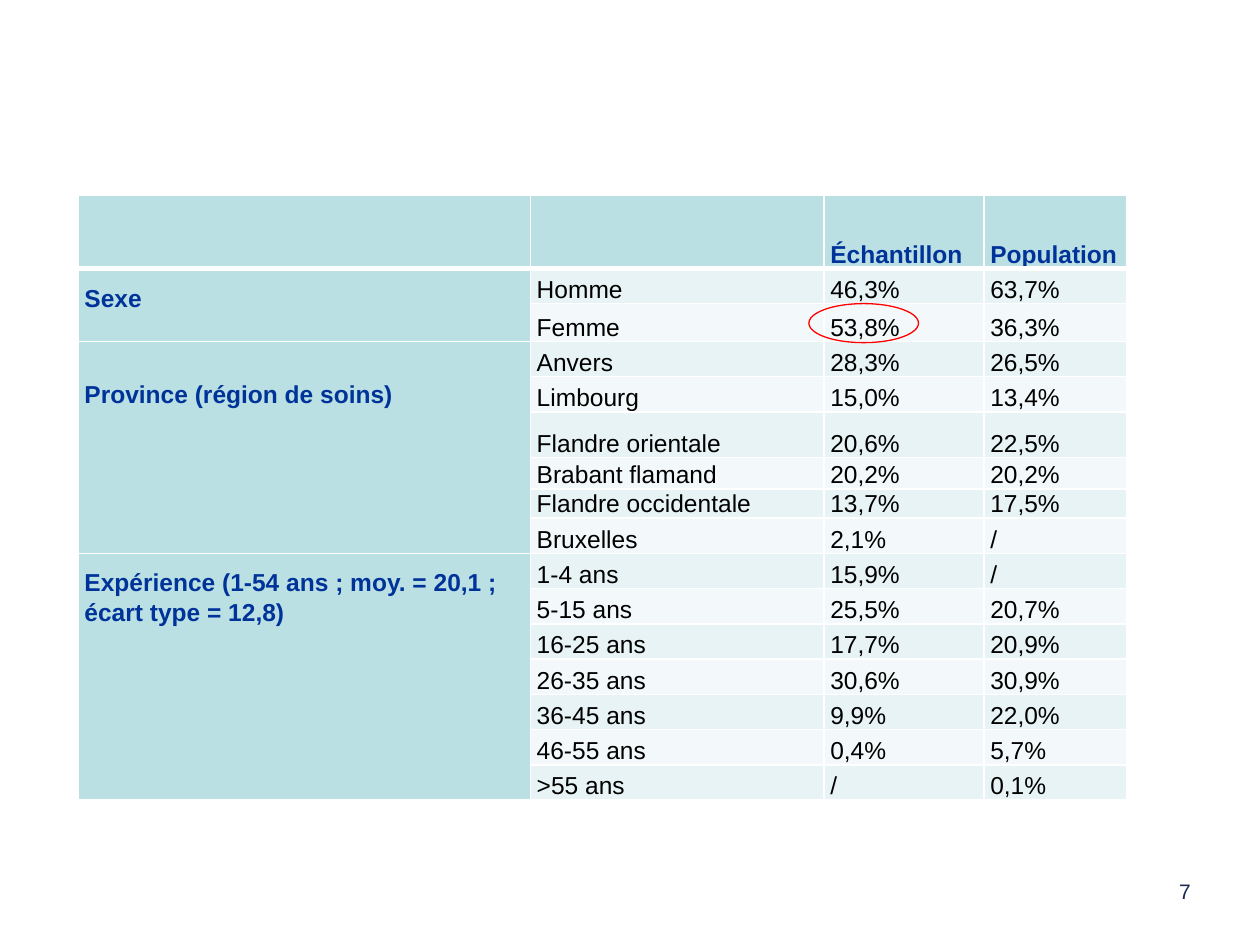
from dataclasses import dataclass

from lxml import etree
from pptx import Presentation
from pptx.dml.color import RGBColor
from pptx.enum.shapes import MSO_SHAPE
from pptx.enum.text import MSO_ANCHOR, PP_ALIGN
from pptx.oxml.ns import qn
from pptx.util import Inches, Pt

BOTTOM = MSO_ANCHOR.BOTTOM
RIGHT = PP_ALIGN.RIGHT
ELLIPSE = MSO_SHAPE.OVAL


@dataclass(frozen=True)
class Theme:
    font: str = "Arial"
    table_size: int = 14
    number_size: int = 12
    heading: str = "003399"
    body: str = "000000"
    number: str = "182B52"
    accent: str = "BBE0E3"
    bands: tuple = ("E7F3F4", "F3F9FA")
    border: str = "FFFFFF"
    mark: str = "FF0000"
    line_spacing: float = 1.06
    line_height: float = 0.23


COLUMN_WIDTHS = [3.59, 2.33, 1.27, 1.13]
HEADER_HEIGHT = 0.58
ROW_HEIGHT = 0.28
SPECIAL_HEIGHTS = {2: 0.3, 5: 0.36, 6: 0.25, 7: 0.23}
HEADINGS = ["", "", "Échantillon", "Population"]
GROUPS = [
    ("Sexe", 1, [
        ("Homme", "46,3%", "63,7%"),
        ("Femme", "53,8%", "36,3%"),
    ]),
    ("Province (région de soins)", 5, [
        ("Anvers", "28,3%", "26,5%"),
        ("Limbourg", "15,0%", "13,4%"),
        ("Flandre orientale", "20,6%", "22,5%"),
        ("Brabant flamand", "20,2%", "20,2%"),
        ("Flandre occidentale", "13,7%", "17,5%"),
        ("Bruxelles", "2,1%", "/"),
    ]),
    ("Expérience (1-54 ans ; moy. = 20,1 ; écart type = 12,8)", 6, [
        ("1-4 ans", "15,9%", "/"),
        ("5-15 ans", "25,5%", "20,7%"),
        ("16-25 ans", "17,7%", "20,9%"),
        ("26-35 ans", "30,6%", "30,9%"),
        ("36-45 ans", "9,9%", "22,0%"),
        ("46-55 ans", "0,4%", "5,7%"),
        (">55 ans", "/", "0,1%"),
    ]),
]


def apply_format(target, values):
    for name, value in values.items():
        setattr(target, name, value)


class SlideBuilder:
    def __init__(self, page, theme):
        self.page = page
        self.theme = theme

    def add_text(self, para, text, size, color, bold=False):
        span = para.add_run()
        span.text = text
        apply_format(span.font, {
            "name": self.theme.font, "size": Pt(size), "bold": bold})
        span.font.color.rgb = RGBColor.from_string(color)

    def borders(self, cell, bottom_width):
        properties = cell._tc.get_or_add_tcPr()
        widths = {"a:lnL": 1, "a:lnR": 1, "a:lnT": 1, "a:lnB": bottom_width}
        for tag, width in widths.items():
            line = etree.SubElement(properties, qn(tag), w=str(Pt(width)))
            fill = etree.SubElement(line, qn("a:solidFill"))
            etree.SubElement(fill, qn("a:srgbClr"), val=self.theme.border)

    def cell(self, cell, text, fill, heading=False, lines_below=0,
             bottom_width=1):
        theme = self.theme
        apply_format(cell, {
            "margin_left": Inches(0.05),
            "margin_right": Inches(0.05),
            "margin_top": 0,
            "margin_bottom": Inches(lines_below * theme.line_height),
            "vertical_anchor": BOTTOM,
        })
        self.borders(cell, bottom_width)
        cell.fill.solid()
        cell.fill.fore_color.rgb = RGBColor.from_string(fill)
        if text:
            para = cell.text_frame.paragraphs[0]
            para.line_spacing = theme.line_spacing
            color = theme.heading if heading else theme.body
            self.add_text(para, text, theme.table_size, color, heading)

    def table(self, left, top, headings, groups):
        theme = self.theme
        row_count = 1 + sum(len(rows) for _, _, rows in groups)
        heights = [HEADER_HEIGHT] + [
            SPECIAL_HEIGHTS.get(row, ROW_HEIGHT) for row in range(1, row_count)]
        table = self.page.shapes.add_table(
            row_count, len(headings), Inches(left), Inches(top),
            Inches(sum(COLUMN_WIDTHS)), Inches(sum(heights))).table
        table.horz_banding = False
        for column, width in zip(table.columns, COLUMN_WIDTHS):
            column.width = Inches(width)
        for row, height in zip(table.rows, heights):
            row.height = Inches(height)

        for column, text in enumerate(headings):
            self.cell(table.cell(0, column), text, theme.accent,
                      heading=True, bottom_width=3)
        first = 1
        for label, lines_below, rows in groups:
            last = first + len(rows) - 1
            table.cell(first, 0).merge(table.cell(last, 0))
            for row, values in enumerate(rows, first):
                is_first = row == first
                self.cell(table.cell(row, 0), label if is_first else "",
                          theme.accent, heading=True,
                          lines_below=lines_below if is_first else 0)
                for column, text in enumerate(values, 1):
                    self.cell(table.cell(row, column), text,
                              theme.bands[(row - 1) % 2])
            first = last + 1

    def page_number(self, left, top, width, height, text):
        box = self.page.shapes.add_textbox(
            Inches(left), Inches(top), Inches(width), Inches(height))
        frame = box.text_frame
        apply_format(frame, {
            "word_wrap": True, "margin_left": 0, "margin_right": 0,
            "margin_top": 0, "margin_bottom": 0})
        para = frame.paragraphs[0]
        para.alignment = RIGHT
        self.add_text(para, text, self.theme.number_size, self.theme.number)

    def ring(self, left, top, width, height):
        ring = self.page.shapes.add_shape(
            ELLIPSE, Inches(left), Inches(top), Inches(width), Inches(height))
        ring.shadow.inherit = False
        ring.fill.background()
        ring.line.color.rgb = RGBColor.from_string(self.theme.mark)
        ring.line.width = Pt(0.75)


def main():
    deck = Presentation()
    apply_format(deck, {"slide_width": Inches(10), "slide_height": Inches(7.5)})
    page = deck.slides.add_slide(deck.slide_layouts[6])
    builder = SlideBuilder(page, Theme())
    builder.table(0.62, 1.55, HEADINGS, GROUPS)
    builder.page_number(8.67, 6.97, 0.78, 0.39, "7")
    builder.ring(6.42, 2.41, 0.87, 0.31)
    deck.save("out.pptx")


if __name__ == "__main__":
    main()
